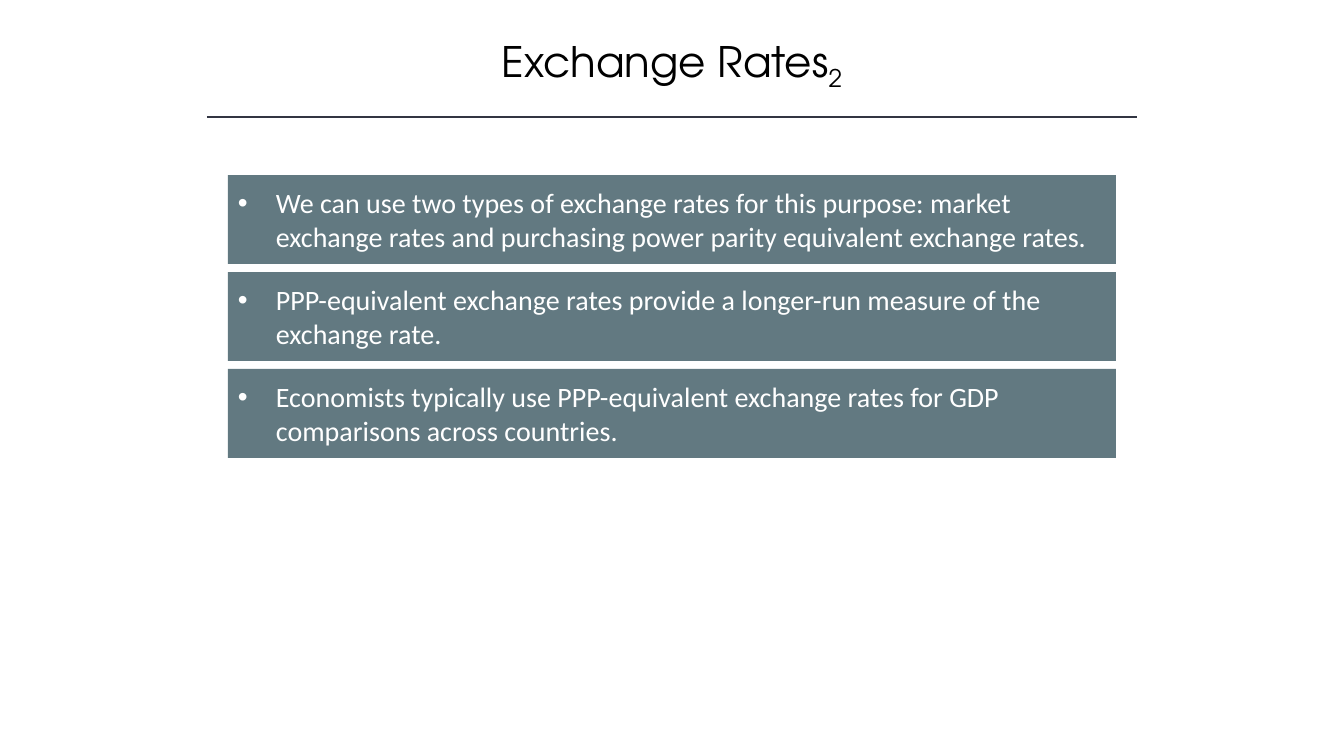
from lxml.etree import SubElement
from pptx import Presentation
from pptx.dml.color import RGBColor
from pptx.enum.shapes import MSO_CONNECTOR, MSO_SHAPE
from pptx.enum.text import MSO_ANCHOR, PP_ALIGN
from pptx.oxml.ns import qn
from pptx.util import Emu, Pt

POINTS = [
    "We can use two types of exchange rates for this purpose: market exchange rates "
    "and purchasing power parity equivalent exchange rates.",
    "PPP-equivalent exchange rates provide a longer-run measure of the exchange rate.",
    "Economists typically use PPP-equivalent exchange rates for GDP comparisons "
    "across countries.",
]


def px(n):
    """Turn whole pixels into EMU."""
    return Emu(round(n * 914400 / 100.8))


def color(code):
    """Turn a hex string into a colour."""
    return RGBColor.from_string(code)


def add_run(para, text, face, size, code):
    """Add one styled run to a paragraph."""
    run = para.add_run()
    run.text = text
    run.font.name = face
    run.font.size = Pt(size)
    run.font.color.rgb = color(code)
    return run


def add_title(slide, text, sub):
    """Add the centred title with its subscript."""
    box = slide.shapes.add_textbox(px(168), px(34), px(1008), px(56))
    frame = box.text_frame
    frame.word_wrap = True
    frame.vertical_anchor = MSO_ANCHOR.MIDDLE
    para = frame.paragraphs[0]
    para.alignment = PP_ALIGN.CENTER
    para.line_spacing = 0.9
    add_run(para, text, "TeX Gyre Adventor", 30, "000000")
    low = add_run(para, sub, "TeX Gyre Adventor", 30, "000000")
    low.font._element.set("baseline", "-25000")


def add_rule(slide, left, right, top):
    """Add the thin line under the title."""
    line = slide.shapes.add_connector(
        MSO_CONNECTOR.STRAIGHT, px(left), px(top), px(right), px(top))
    line.line.color.rgb = color("323542")
    line.line.width = Pt(1)
    SubElement(line._element.spPr, qn("a:effectLst"))


def add_bullet(para, indent):
    """Give a paragraph a hanging round bullet."""
    props = para._p.get_or_add_pPr()
    props.set("marL", str(px(indent)))
    props.set("indent", str(-px(indent)))
    SubElement(props, qn("a:buFont"), typeface="Arial")
    SubElement(props, qn("a:buChar"), char="•")


def add_bar(slide, top, text):
    """Add one filled bar with a bulleted point."""
    bar = slide.shapes.add_shape(
        MSO_SHAPE.RECTANGLE, px(228), px(top), px(888), px(89))
    bar.shadow.inherit = False
    bar.fill.solid()
    bar.fill.fore_color.rgb = color("627981")
    bar.line.fill.background()
    frame = bar.text_frame
    frame.word_wrap = True
    frame.margin_right = px(20)
    frame.vertical_anchor = MSO_ANCHOR.MIDDLE
    para = frame.paragraphs[0]
    para.alignment = PP_ALIGN.LEFT
    add_bullet(para, 38)
    add_run(para, text, "Calibri", 20, "FFFFFF")


def main():
    """Build and save the slide."""
    deck = Presentation()
    deck.slide_width, deck.slide_height = px(1344), px(756)
    slide = deck.slides.add_slide(deck.slide_layouts[6])
    add_title(slide, "Exchange Rates", "2")
    add_rule(slide, 207, 1137, 117)
    for i, text in enumerate(POINTS):
        add_bar(slide, 175 + 97 * i, text)
    deck.save("out.pptx")


if __name__ == "__main__":
    main()
